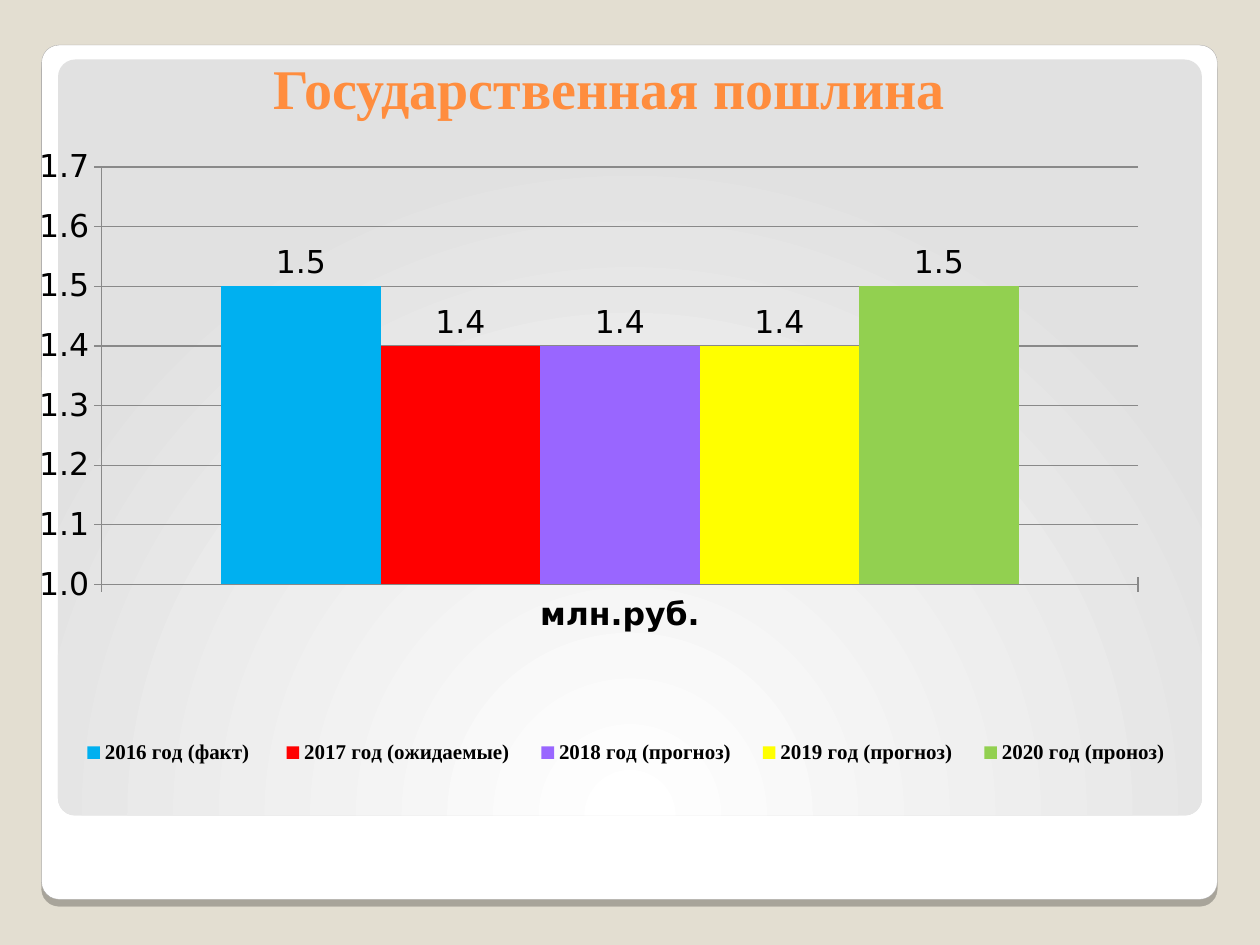
from lxml import etree
from pptx import Presentation
from pptx.chart.data import CategoryChartData
from pptx.dml.color import RGBColor
from pptx.enum.chart import XL_CHART_TYPE, XL_LABEL_POSITION, XL_LEGEND_POSITION, XL_TICK_MARK
from pptx.enum.shapes import MSO_SHAPE
from pptx.enum.text import MSO_ANCHOR, PP_ALIGN
from pptx.oxml import parse_xml
from pptx.oxml.ns import nsdecls, qn
from pptx.util import Cm, Pt

COLUMNS = XL_CHART_TYPE.COLUMN_CLUSTERED
OUTSIDE_END = XL_LABEL_POSITION.OUTSIDE_END
LEGEND_RIGHT = XL_LEGEND_POSITION.RIGHT
TICK_CROSS = XL_TICK_MARK.CROSS
ROUNDED = MSO_SHAPE.ROUNDED_RECTANGLE

BEIGE = RGBColor(0xE3, 0xDE, 0xD1)
WHITE = RGBColor(0xFF, 0xFF, 0xFF)
PANEL_GRAY = RGBColor(0xE1, 0xE1, 0xE1)
EDGE_GRAY = RGBColor(0xA4, 0xA3, 0xA3)
AXIS_GRAY = RGBColor(0x89, 0x89, 0x89)
ORANGE = RGBColor(0xFF, 0x8D, 0x3E)
BLACK = RGBColor(0, 0, 0)

TITLE = "Государственная пошлина"
SERIF = "Times New Roman"
SANS = "DejaVu Sans"
CATEGORY = "млн.руб."
SERIES = [
    ("2016 год (факт) ", 1.5, RGBColor(0x00, 0xB0, 0xF0)),
    ("2017 год (ожидаемые)", 1.4, RGBColor(0xFF, 0x00, 0x00)),
    ("2018 год (прогноз)", 1.4, RGBColor(0x99, 0x66, 0xFF)),
    ("2019 год (прогноз)", 1.4, RGBColor(0xFF, 0xFF, 0x00)),
    ("2020 год (проноз)", 1.5, RGBColor(0x92, 0xD0, 0x50)),
]

# Left, top, width, height in centimetres
CARD_BOX = (0.84, 0.91, 23.7, 17.22)
PANEL_BOX = (1.17, 1.2, 23.06, 15.24)
TITLE_BOX = (0.58, 0.99, 23.42, 1.57)
CHART_BOX = (0.79, 2.59, 23.42, 15.67)
CORNER_RADIUS = 0.35
# Left, top, width, height as shares of the chart
PLOT_LAYOUT = (0, 0.026, 0.946, 0.624)
LEGEND_LAYOUT = (0.02, 0.77, 0.97, 0.066)


def place(box):
    return [Cm(length) for length in box]


def add_rounded_panel(slide, box):
    panel = slide.shapes.add_shape(ROUNDED, *place(box))
    panel.adjustments[0] = CORNER_RADIUS / box[3]
    panel.shadow.inherit = False
    return panel


def add_card(slide):
    card = add_rounded_panel(slide, CARD_BOX)
    card.fill.solid()
    card.fill.fore_color.rgb = WHITE
    card.line.color.rgb = EDGE_GRAY
    card.line.width = Pt(0.16)
    card._element.spPr.find(qn("a:effectLst")).append(parse_xml(
        f'<a:outerShdw {nsdecls("a")} blurRad="0" dist="50800" dir="5400000" algn="tl" '
        'rotWithShape="0"><a:srgbClr val="000000"><a:alpha val="25000"/></a:srgbClr>'
        '</a:outerShdw>'))


def add_gradient_panel(slide):
    panel = add_rounded_panel(slide, PANEL_BOX)
    panel.line.fill.background()
    panel.fill.gradient()
    for stop, color in zip(panel.fill.gradient_stops, (WHITE, PANEL_GRAY)):
        stop.color.rgb = color
    gradient = panel._element.spPr.find(qn("a:gradFill"))
    gradient.remove(gradient.find(qn("a:lin")))
    gradient.append(parse_xml(
        f'<a:path {nsdecls("a")} path="circle">'
        '<a:fillToRect l="50000" t="175000" r="50000" b="-75000"/></a:path>'))


def style_font(font, name, size, color, bold=False):
    font.name = name
    font.size = Pt(size)
    font.color.rgb = color
    font.bold = bold


def add_title(slide):
    frame = slide.shapes.add_textbox(*place(TITLE_BOX)).text_frame
    frame.word_wrap = True
    frame.vertical_anchor = MSO_ANCHOR.BOTTOM
    paragraph = frame.paragraphs[0]
    paragraph.text = TITLE
    paragraph.alignment = PP_ALIGN.CENTER
    style_font(paragraph.font, SERIF, 32, ORANGE, bold=True)


def set_manual_layout(element, shares, target=None):
    """Fix the place of a plot area or legend inside the chart."""
    for old_layout in element.findall(qn("c:layout")):
        element.remove(old_layout)
    layout = parse_xml(f'<c:layout {nsdecls("c")}><c:manualLayout/></c:layout>')
    settings = [("layoutTarget", target)] if target else []
    settings += [("xMode", "edge"), ("yMode", "edge"), *zip("xywh", shares)]
    for tag, value in settings:
        etree.SubElement(layout[0], qn(f"c:{tag}")).set("val", str(value))
    legend_position = element.find(qn("c:legendPos"))
    if legend_position is None:
        element.insert(0, layout)
    else:
        legend_position.addnext(layout)


def style_axis(axis, bold=False):
    axis.major_tick_mark = TICK_CROSS
    style_font(axis.tick_labels.font, SANS, 18, BLACK, bold)
    style_line(axis.format.line)


def style_line(line):
    line.color.rgb = AXIS_GRAY
    line.width = Pt(0.75)


def add_fee_chart(slide):
    data = CategoryChartData(number_format="0.0")
    data.categories = [CATEGORY]
    for name, value, _ in SERIES:
        data.add_series(name, [value])
    chart = slide.shapes.add_chart(COLUMNS, *place(CHART_BOX), data).chart
    chart.has_title = False
    style_font(chart.font, SANS, 18, BLACK)

    plot = chart.plots[0]
    plot.vary_by_categories = False
    plot.gap_width = 150
    plot.overlap = 0
    for series, (_, _, color) in zip(plot.series, SERIES):
        series.format.fill.solid()
        series.format.fill.fore_color.rgb = color
        labels = series.data_labels
        labels.show_value = True
        labels.position = OUTSIDE_END
        style_font(labels.font, SANS, 18, BLACK)

    style_axis(chart.category_axis, bold=True)
    value_axis = chart.value_axis
    style_axis(value_axis)
    value_axis.minimum_scale = 1
    value_axis.maximum_scale = 1.7
    value_axis.major_unit = 0.1
    value_axis.tick_labels.number_format = "0.0"
    value_axis.tick_labels.number_format_is_linked = False
    style_line(value_axis.major_gridlines.format.line)

    chart.has_legend = True
    chart.legend.position = LEGEND_RIGHT
    chart.legend.include_in_layout = False
    style_font(chart.legend.font, SERIF, 12, BLACK, bold=True)
    chart_element = chart._chartSpace.chart
    set_manual_layout(chart_element.plotArea, PLOT_LAYOUT, "outer")
    set_manual_layout(chart_element.find(qn("c:legend")), LEGEND_LAYOUT)


def main():
    presentation = Presentation()
    presentation.slide_width = Cm(25.4)
    presentation.slide_height = Cm(19.05)
    slide = presentation.slides.add_slide(presentation.slide_layouts[6])
    slide.background.fill.solid()
    slide.background.fill.fore_color.rgb = BEIGE
    add_card(slide)
    add_gradient_panel(slide)
    add_title(slide)
    add_fee_chart(slide)
    presentation.save("out.pptx")


if __name__ == "__main__":
    main()
